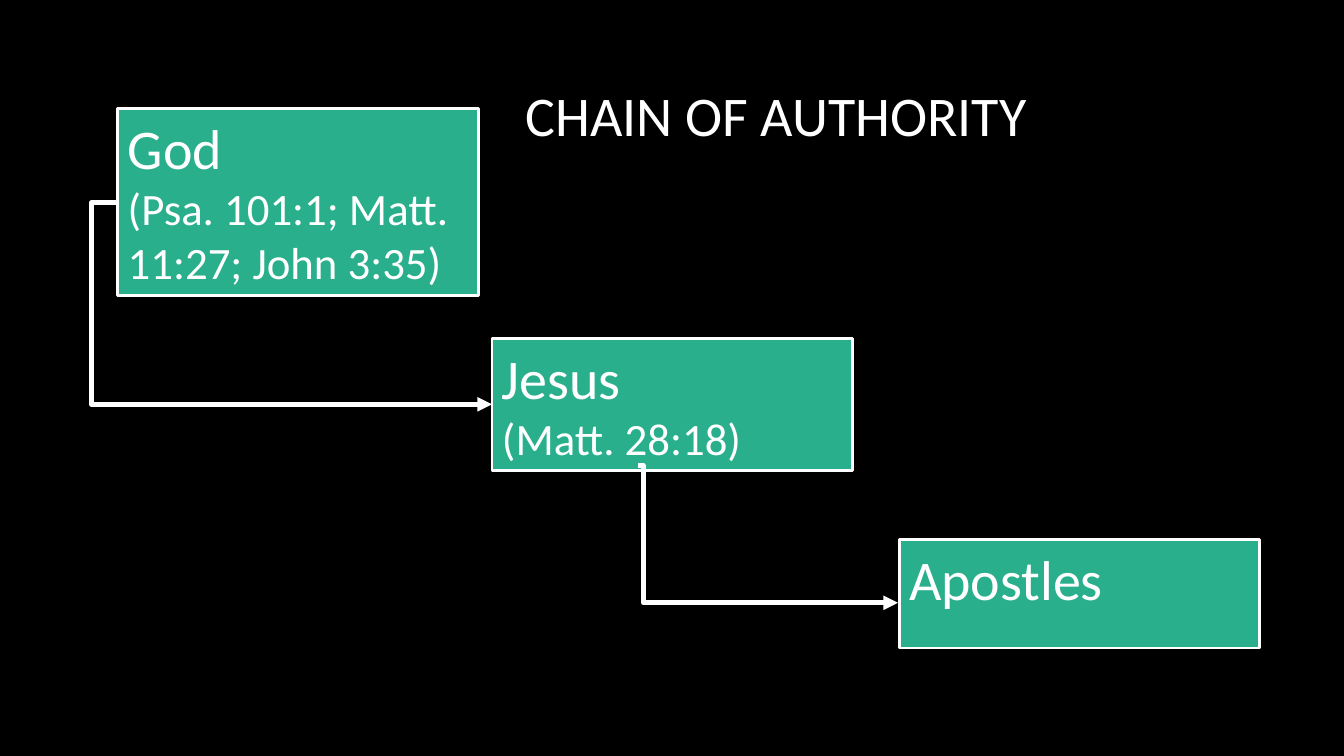
"""Build the chain of authority slide."""
import pptx
import pptx.dml.color
import pptx.enum.shapes
import pptx.enum.text
import pptx.oxml
import pptx.oxml.ns
import pptx.util
from pptx.util import Cm

WHITE = "FFFFFF"
GREEN = "29AF8C"
BLACK = "000000"
BOX_WIDTH = 9.09


def paint(fill, color):
    """Make a fill solid in a hex colour."""
    fill.solid()
    fill.fore_color.rgb = pptx.dml.color.RGBColor.from_string(color)


def write(s, lines):
    """Write a 40 pt heading line followed by 32 pt lines."""
    tf = s.text_frame
    tf.word_wrap = True
    tf.vertical_anchor = pptx.enum.text.MSO_ANCHOR.TOP
    tf.text = "\n".join(lines)
    for i, p in enumerate(tf.paragraphs):
        p.alignment = pptx.enum.text.PP_ALIGN.LEFT
        for r in p.runs:
            r.font.name = "Calibri"
            r.font.size = pptx.util.Pt(32 if i else 40)
            paint(r.font.fill, WHITE)


def add_title(sp, left, top, width, height, text):
    """Add the title text box."""
    write(sp.add_textbox(Cm(left), Cm(top), Cm(width), Cm(height)), [text])


def add_box(sp, left, top, height, *lines):
    """Add a green box with a white outline."""
    s = sp.add_shape(pptx.enum.shapes.MSO_SHAPE.RECTANGLE,
                     Cm(left), Cm(top), Cm(BOX_WIDTH), Cm(height))
    s.shadow.inherit = False
    paint(s.fill, GREEN)
    paint(s.line.fill, WHITE)
    s.line.width = pptx.util.Pt(2)
    write(s, lines)


def add_arrow(sp, x1, y1, x2, y2, bend):
    """Add an elbow arrow that turns at a fraction of its width."""
    s = sp.add_connector(pptx.enum.shapes.MSO_CONNECTOR.ELBOW,
                         Cm(x1), Cm(y1), Cm(x2), Cm(y2))
    paint(s.line.fill, WHITE)
    s.line.width = pptx.util.Pt(3.5)
    ns = pptx.oxml.ns.nsdecls("a")
    tail = pptx.oxml.parse_xml(f'<a:tailEnd {ns} type="triangle"/>')
    s.line.fill._xPr.append(tail)
    pr = s._element.spPr
    pr.append(pptx.oxml.parse_xml(f"<a:effectLst {ns}/>"))
    guides = pr.find(pptx.oxml.ns.qn("a:prstGeom")).get_or_add_avLst()
    guides.append(pptx.oxml.parse_xml(
        f'<a:gd {ns} name="adj1" fmla="val {round(bend * 100000)}"/>'))


def main():
    """Build and save the slide."""
    prs = pptx.Presentation()
    prs.slide_width, prs.slide_height = Cm(33.87), Cm(19.05)
    slide = prs.slides.add_slide(prs.slide_layouts[6])
    paint(slide.background.fill, BLACK)
    sp = slide.shapes
    add_title(sp, 13, 1.9, 14.17, 1.96, "CHAIN OF AUTHORITY")
    add_box(sp, 2.97, 2.74, 4.7, "God", "(Psa. 101:1; Matt. 11:27; John 3:35)")
    add_box(sp, 12.4, 8.53, 3.33, "Jesus", "(Matt. 28:18)")
    add_box(sp, 22.66, 13.59, 2.74, "Apostles")
    add_arrow(sp, 2.97, 5.11, 12.4, 10.19, -0.07)
    add_arrow(sp, 16.08, 11.73, 22.63, 15.19, 0.02)
    prs.save("out.pptx")


if __name__ == "__main__":
    main()
